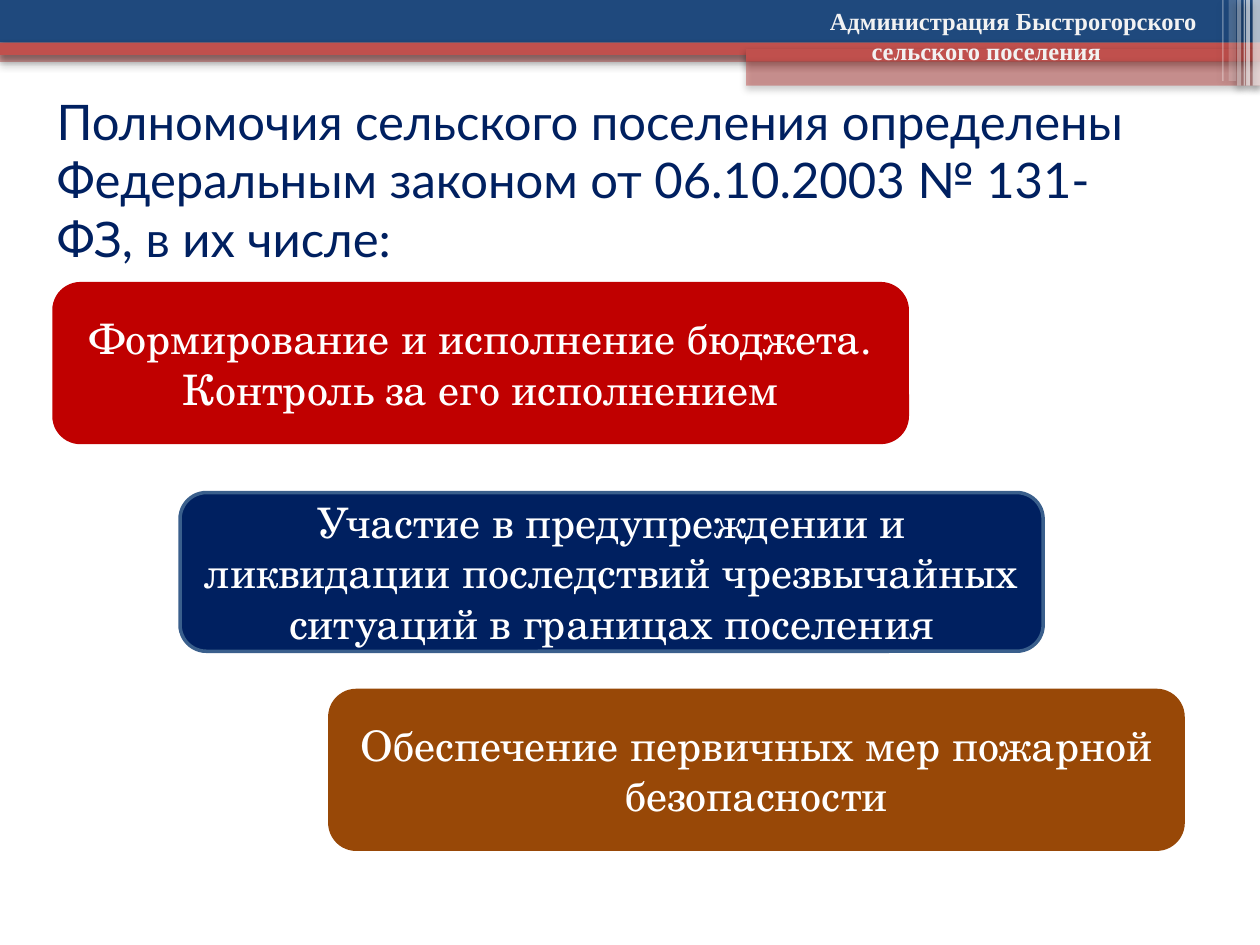
"""Build a slide on the powers of a rural settlement."""
from dataclasses import dataclass

from lxml import etree
from pptx import Presentation
from pptx.dml.color import RGBColor
from pptx.enum.shapes import MSO_SHAPE
from pptx.enum.text import MSO_ANCHOR, MSO_AUTO_SIZE, PP_ALIGN
from pptx.oxml.ns import qn
from pptx.util import Cm, Pt

RECT, ROUND = MSO_SHAPE.RECTANGLE, MSO_SHAPE.ROUNDED_RECTANGLE
MIDDLE, NO_FIT = MSO_ANCHOR.MIDDLE, MSO_AUTO_SIZE.NONE
LEFT, CENTER = PP_ALIGN.LEFT, PP_ALIGN.CENTER


@dataclass(frozen=True)
class Theme:
    navy: str = "002060"
    blue: str = "1F497D"
    edge: str = "3A5F8C"
    red: str = "C0504D"
    crimson: str = "C00000"
    brown: str = "984807"
    white: str = "FFFFFF"
    pale: str = "F2F2F2"
    title_font: str = "Lato"
    card_font: str = "TeX Gyre Schola"
    header_font: str = "Times New Roman"
    title_size: int = 28
    card_size: int = 24
    header_size: int = 14


def style(p, font, size, color, align, bold=False):
    p.alignment = align
    for r in p.runs:
        r.font.name, r.font.size, r.font.bold = font, Pt(size), bold
        r.font.color.rgb = RGBColor.from_string(color)


def add_box(shapes, kind, box, fill):
    sp = shapes.add_shape(kind, *(Cm(v) for v in box))
    sp.shadow.inherit = False
    sp.fill.solid()
    sp.fill.fore_color.rgb = RGBColor.from_string(fill)
    return sp


theme = Theme()
prs = Presentation()
prs.slide_width, prs.slide_height = Cm(25.4), Cm(19.05)
s = prs.slides.add_slide(prs.slide_layouts[5])

bands = [
    (0, 1.02, 25.4, 0.23, theme.red, 50),
    (0, 0, 25.4, 0.86, theme.blue, 100),
    (0, 0.86, 25.4, 0.25, theme.red, 100),
    (15.04, 0.99, 10.36, 0.25, theme.red, 100),
    (15.04, 1.22, 10.36, 0.51, theme.red, 50),
    (25.25, 0, 0.15, 1.73, theme.white, 66),
    (25.12, 0, 0.08, 1.73, theme.white, 66),
    (25.07, 0, 0.03, 1.73, theme.white, 60),
    (24.94, 0, 0.08, 1.73, theme.white, 40),
    (24.77, 0, 0.15, 1.63, theme.white, 20),
    (24.64, 0, 0.03, 1.63, theme.white, 31),
]
for *box, color, opacity in bands:
    sp = add_box(s.shapes, RECT, box, color)
    sp.line.fill.background()
    spPr = sp._element.spPr
    if opacity < 100:
        clr = spPr.find(qn("a:solidFill")).find(qn("a:srgbClr"))
        etree.SubElement(clr, qn("a:alpha"), val=str(opacity * 1000))
    shadow = etree.SubElement(
        spPr.find(qn("a:effectLst")), qn("a:outerShdw"), blurRad=str(Pt(4.1)),
        dist=str(Pt(2)), dir="5400000", algn="t", rotWithShape="0")
    clr = etree.SubElement(shadow, qn("a:srgbClr"), val="000000")
    etree.SubElement(clr, qn("a:alpha"), val="40000")

title = s.shapes.title
title.left, title.top, title.width, title.height = Cm(0.89), Cm(2.13), Cm(22.86), Cm(2.97)
tf = title.text_frame
tf.text = ("Полномочия сельского поселения определены Федеральным законом "
           "от 06.10.2003 № 131-ФЗ, в их числе:")
tf.word_wrap, tf.auto_size, tf.vertical_anchor = True, NO_FIT, MIDDLE
style(tf.paragraphs[0], theme.title_font, theme.title_size, theme.navy, LEFT)

cards = [
    (3.63, 9.93, 17.4, theme.navy, theme.edge,
     "Участие в предупреждении и ликвидации последствий чрезвычайных "
     "ситуаций в границах поселения"),
    (1.09, 5.72, 17.2, theme.crimson, theme.crimson,
     "Формирование и исполнение бюджета. Контроль за его исполнением"),
    (6.65, 13.92, 17.2, theme.brown, theme.brown,
     "Обеспечение первичных мер пожарной безопасности"),
]
for left, top, width, fill, edge, text in cards:
    sp = add_box(s.shapes, ROUND, (left, top, width, 3.2), fill)
    sp.line.color.rgb = RGBColor.from_string(edge)
    sp.line.width = Pt(2)
    tf = sp.text_frame
    tf.text = text
    tf.word_wrap, tf.vertical_anchor = True, MIDDLE
    style(tf.paragraphs[0], theme.card_font, theme.card_size, theme.white, CENTER)

header = s.shapes.add_textbox(Cm(14.88), Cm(0), Cm(10.01), Cm(1.42))
tf = header.text_frame
tf.word_wrap = True
tf.text = "Администрация Быстрогорского\nсельского поселения"
for p in tf.paragraphs:
    style(p, theme.header_font, theme.header_size, theme.pale, CENTER, True)
tf.paragraphs[0]._p.get_or_add_pPr().set("marL", str(Cm(1.09)))

prs.save("out.pptx")
